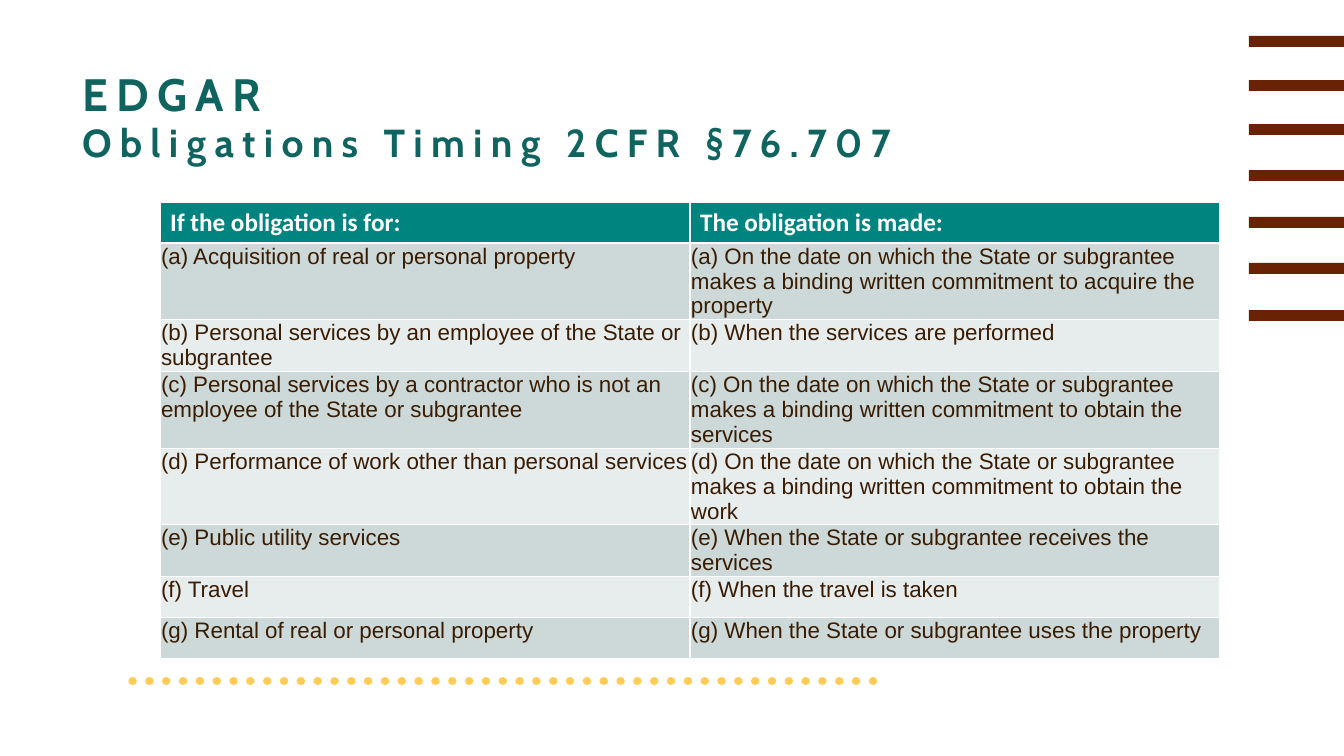
"""Builds the EDGAR slide on the timing of obligations."""
from typing import NamedTuple

from lxml.etree import SubElement
from pptx import Presentation
from pptx.dml.color import RGBColor
from pptx.enum.dml import MSO_LINE
from pptx.enum.shapes import MSO_CONNECTOR, MSO_SHAPE
from pptx.enum.text import MSO_ANCHOR, MSO_AUTO_SIZE, PP_ALIGN
from pptx.oxml.ns import qn
from pptx.slide import Slide
from pptx.table import _Cell
from pptx.util import Emu, Pt

EMU_PER_PX = 914400 / 100.8


class Obligation(NamedTuple):
    purpose: str
    made: str


class CellStyle(NamedTuple):
    fill: str
    color: str
    font: str
    size: int
    bold: bool


class TitleRun(NamedTuple):
    text: str
    size: float


HEADER_STYLE = CellStyle("008480", "FFFFFF", "Calibri", 18, True)
BAND_STYLES = [
    CellStyle(fill, "3A1C03", "Arial", 16, False) for fill in ("CCD9D8", "E7EDED")
]
HEADER = Obligation("If the obligation is for:", "The obligation is made:")
OBLIGATIONS = [
    Obligation(
        "(a) Acquisition of real or personal property",
        "(a) On the date on which the State or subgrantee makes a binding "
        "written commitment to acquire the property",
    ),
    Obligation(
        "(b) Personal services by an employee of the State or subgrantee",
        "(b) When the services are performed",
    ),
    Obligation(
        "(c) Personal services by a contractor who is not an employee of the "
        "State or subgrantee",
        "(c) On the date on which the State or subgrantee makes a binding "
        "written commitment to obtain the services",
    ),
    Obligation(
        "(d) Performance of work other than personal services",
        "(d) On the date on which the State or subgrantee makes a binding "
        "written commitment to obtain the work",
    ),
    Obligation(
        "(e) Public utility services",
        "(e) When the State or subgrantee receives the services",
    ),
    Obligation("(f) Travel", "(f) When the travel is taken"),
    Obligation(
        "(g) Rental of real or personal property",
        "(g) When the State or subgrantee uses the property",
    ),
]
TITLE_LINES = [
    [TitleRun("EDGAR", 32.4), TitleRun(" ", 39.6)],
    [TitleRun("Obligations Timing 2CFR §76.707", 27.9)],
]
BAR_TOPS = [36, 80, 124, 170, 217, 263, 310]


def px(length: int) -> Emu:
    """Turn pixels into EMU."""
    return Emu(round(length * EMU_PER_PX))


def rgb(color: str) -> RGBColor:
    """Turn a hex string into a colour."""
    return RGBColor.from_string(color)


def add_title(slide: Slide) -> None:
    """Place and fill the title placeholder."""
    title = slide.shapes.title
    title.left, title.top, title.width, title.height = map(px, (72, 54, 1001, 122))
    frame = title.text_frame
    frame.auto_size = MSO_AUTO_SIZE.NONE
    frame.vertical_anchor = MSO_ANCHOR.MIDDLE
    paragraph = frame.paragraphs[0]
    paragraph.alignment = PP_ALIGN.LEFT
    paragraph.line_spacing = 0.9
    paragraph.font.name = "Cabin"
    paragraph.font.bold = True
    paragraph.font.color.rgb = rgb("0F6460")
    for index, line in enumerate(TITLE_LINES):
        if index:
            paragraph.add_line_break()
        for part in line:
            run = paragraph.add_run()
            run.text = part.text
            run.font.size = Pt(part.size)
            run.font._element.set("spc", "600")


def add_bars(slide: Slide) -> None:
    """Draw the bars at the right edge."""
    for top in BAR_TOPS:
        bar = slide.shapes.add_shape(
            MSO_SHAPE.RECTANGLE, px(1249), px(top), px(95), px(11)
        )
        bar.shadow.inherit = False
        bar.fill.solid()
        bar.fill.fore_color.rgb = rgb("6A2204")
        bar.line.fill.background()


def add_dotted_line(slide: Slide) -> None:
    """Draw the line of round dots under the table."""
    connector = slide.shapes.add_connector(
        MSO_CONNECTOR.STRAIGHT, px(873), px(681), px(129), px(681)
    )
    connector.line.color.rgb = rgb("FFCC56")
    connector.line.width = Pt(6)
    connector.line.dash_style = MSO_LINE.ROUND_DOT
    properties = connector._element.spPr
    properties.find(qn("a:ln")).set("cap", "rnd")
    SubElement(properties, qn("a:effectLst"))


def fill_cell(cell: _Cell, text: str, style: CellStyle) -> None:
    """Write and format one table cell."""
    cell.text = text
    cell.fill.solid()
    cell.fill.fore_color.rgb = rgb(style.fill)
    font = cell.text_frame.paragraphs[0].font
    font.name = style.font
    font.size = Pt(style.size)
    font.bold = style.bold
    font.color.rgb = rgb(style.color)
    if style is not HEADER_STYLE:
        cell.margin_left = cell.margin_right = px(1)
        cell.margin_top = cell.margin_bottom = px(1)


def add_obligation_table(slide: Slide) -> None:
    """Add the table of obligations and their dates."""
    rows = [HEADER, *OBLIGATIONS]
    table = slide.shapes.add_table(
        len(rows), 2, px(160), px(202), px(1060), px(41 * len(rows))
    ).table
    for row_index, obligation in enumerate(rows):
        style = BAND_STYLES[(row_index - 1) % 2] if row_index else HEADER_STYLE
        for column_index, text in enumerate(obligation):
            fill_cell(table.cell(row_index, column_index), text, style)


def main() -> None:
    """Build and save the presentation."""
    presentation = Presentation()
    presentation.slide_width, presentation.slide_height = px(1344), px(756)
    slide = presentation.slides.add_slide(presentation.slide_layouts[5])
    add_dotted_line(slide)
    add_bars(slide)
    add_obligation_table(slide)
    add_title(slide)
    presentation.save("out.pptx")


if __name__ == "__main__":
    main()
